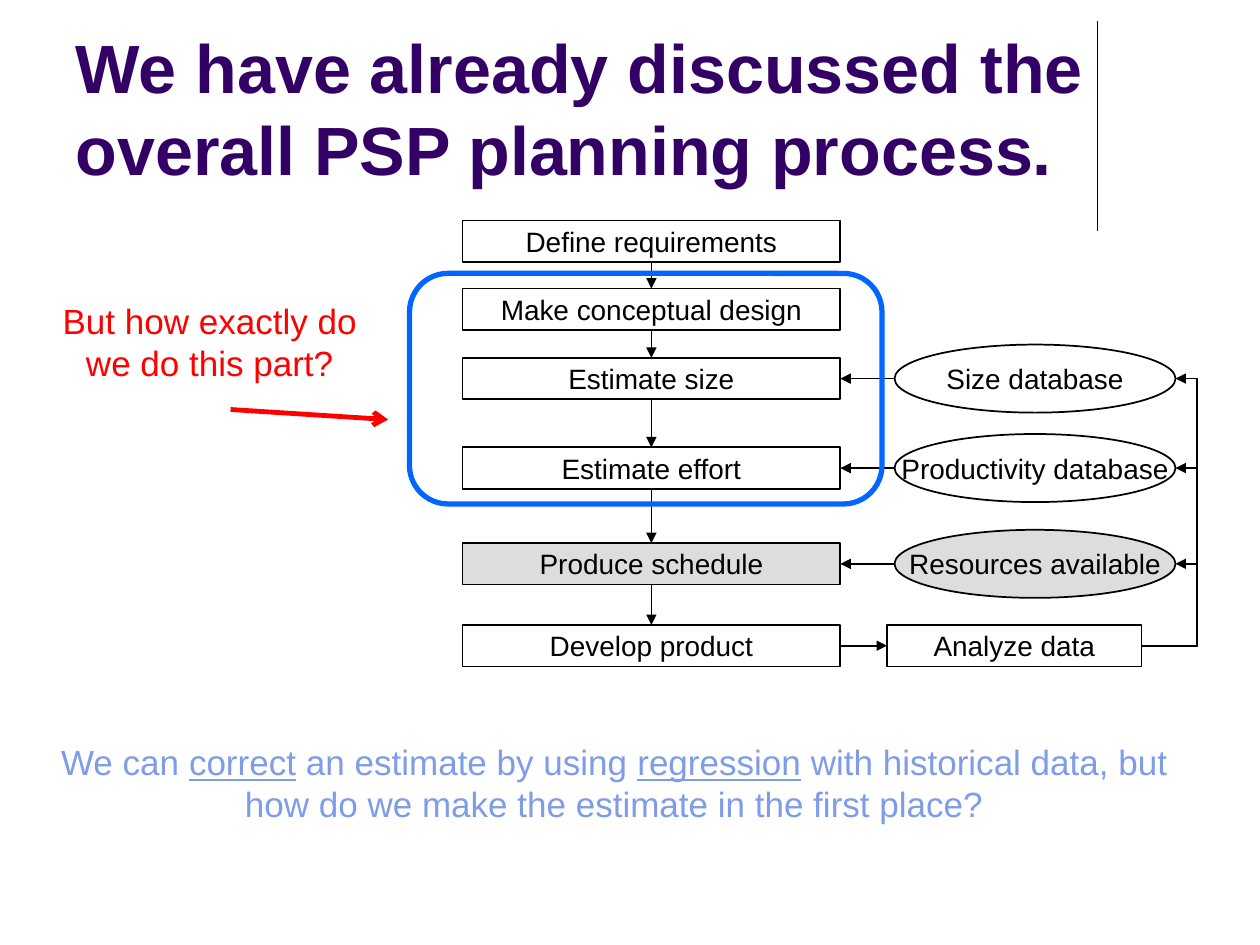
from dataclasses import dataclass
from itertools import pairwise

from lxml import etree
from pptx import Presentation
from pptx.dml.color import RGBColor
from pptx.enum.shapes import MSO_CONNECTOR as CONN, MSO_SHAPE as SHAPE
from pptx.enum.text import MSO_ANCHOR as ANCHOR, MSO_AUTO_SIZE as AUTO, PP_ALIGN as ALIGN
from pptx.oxml.ns import qn
from pptx.shapes.autoshape import Shape
from pptx.shapes.connector import Connector
from pptx.slide import Slide
from pptx.text.text import Font
from pptx.util import Inches, Pt

BLACK, RED, BLUE = "000000", "FF0000", "0066FF"
GREY, PURPLE, LILAC = "DDDDDD", "330066", "7E9CE8"
TOP, LEFT, BOTTOM, RIGHT = range(4)
BOX_X, BOX_W, BOX_H = 3.67, 3, 0.33
DATA_X, DATA_W, DATA_H = 7.1, 2.23, 0.54
ANALYZE_X, ANALYZE_W = 7.04, 2.02
FEEDBACK_X = 9.5


@dataclass
class Step:
    name: str
    top: float
    fill: str | None = None
    source: str | None = None

    @property
    def middle(self) -> float:
        return self.top + BOX_H / 2


STEPS = [
    Step("Define requirements", 1.75),
    Step("Make conceptual design", 2.29),
    Step("Estimate size", 2.84, source="Size database"),
    Step("Estimate effort", 3.55, source="Productivity database"),
    Step("Produce schedule", 4.31, GREY, "Resources available"),
    Step("Develop product", 4.96),
]


def rgb(color: str) -> RGBColor:
    return RGBColor.from_string(color)


def style_font(font: Font, size: float, color: str, bold: bool = False) -> None:
    font.name, font.size, font.bold = "Arial", Pt(size), bold
    font.color.rgb = rgb(color)


def add_outline(s: Slide, kind: SHAPE, x: float, y: float, w: float, h: float,
                color: str = BLACK, width: float = 1, fill: str | None = None) -> Shape:
    sp = s.shapes.add_shape(kind, Inches(x), Inches(y), Inches(w), Inches(h))
    sp.shadow.inherit = False
    sp.line.color.rgb = rgb(color)
    sp.line.width = Pt(width)
    if fill:
        sp.fill.solid()
        sp.fill.fore_color.rgb = rgb(fill)
    else:
        sp.fill.background()
    return sp


def add_node(s: Slide, kind: SHAPE, text: str, x: float, y: float, w: float, h: float,
             fill: str | None = None) -> Shape:
    sp = add_outline(s, kind, x, y, w, h, fill=fill)
    tf = sp.text_frame
    tf.text = text
    tf.word_wrap = False
    tf.vertical_anchor = ANCHOR.MIDDLE
    p = tf.paragraphs[0]
    p.alignment = ALIGN.CENTER
    style_font(p.runs[0].font, 16, BLACK)
    return sp


def add_line(s: Slide, start: tuple[float, float], end: tuple[float, float],
             color: str = BLACK, width: float = 1, head: str | None = "triangle",
             kind: CONN = CONN.STRAIGHT) -> Connector:
    cx = s.shapes.add_connector(kind, *map(Inches, start + end))
    cx.line.color.rgb = rgb(color)
    cx.line.width = Pt(width)
    if head:
        etree.SubElement(cx.line._get_or_add_ln(), qn("a:tailEnd"), type=head)
    etree.SubElement(cx._element.spPr, qn("a:effectLst"))
    return cx


def add_feedback(s: Slide, start: tuple[float, float], end: tuple[float, float]) -> Connector:
    cx = add_line(s, start, end, kind=CONN.ELBOW)
    ratio = (FEEDBACK_X - start[0]) / (end[0] - start[0])
    guides = cx._element.spPr.find(qn("a:prstGeom")).get_or_add_avLst()
    etree.SubElement(guides, qn("a:gd"), name="adj1", fmla=f"val {round(ratio * 100000)}")
    return cx


def add_note(s: Slide, parts: list[str], x: float, y: float, w: float, h: float,
             color: str, underlined: tuple[str, ...] = ()) -> None:
    tf = s.shapes.add_textbox(Inches(x), Inches(y), Inches(w), Inches(h)).text_frame
    tf.word_wrap = True
    tf.auto_size = AUTO.SHAPE_TO_FIT_TEXT
    p = tf.paragraphs[0]
    p.alignment = ALIGN.CENTER
    for part in parts:
        r = p.add_run()
        r.text = part
        style_font(r.font, 20, color)
        r.font.underline = part in underlined


def add_title(s: Slide, text: str) -> None:
    sp = s.shapes.title
    sp.left, sp.top, sp.width, sp.height = map(Inches, (0.5, 0.13, 8.25, 1.42))
    tf = sp.text_frame
    tf.text = text
    tf.auto_size = AUTO.NONE
    tf.vertical_anchor = ANCHOR.BOTTOM
    p = tf.paragraphs[0]
    p.alignment = ALIGN.LEFT
    style_font(p.runs[0].font, 39, PURPLE, bold=True)


def add_process(s: Slide) -> None:
    boxes = [add_node(s, SHAPE.RECTANGLE, step.name, BOX_X, step.top, BOX_W, BOX_H, step.fill)
             for step in STEPS]
    last = STEPS[-1]
    analyze = add_node(s, SHAPE.RECTANGLE, "Analyze data", ANALYZE_X, last.top, ANALYZE_W, BOX_H)
    center, right = BOX_X + BOX_W / 2, BOX_X + BOX_W

    for (step, box), (following, next_box) in pairwise(zip(STEPS, boxes)):
        cx = add_line(s, (center, step.top + BOX_H), (center, following.top))
        cx.begin_connect(box, BOTTOM)
        cx.end_connect(next_box, TOP)

    cx = add_line(s, (right, last.middle), (ANALYZE_X, last.middle))
    cx.begin_connect(boxes[-1], RIGHT)
    cx.end_connect(analyze, LEFT)

    for step, box in zip(STEPS, boxes):
        if step.source:
            add_node(s, SHAPE.OVAL, step.source, DATA_X, step.middle - DATA_H / 2,
                     DATA_W, DATA_H, step.fill)
            cx = add_line(s, (DATA_X, step.middle), (right, step.middle))
            cx.end_connect(box, RIGHT)
            add_feedback(s, (ANALYZE_X + ANALYZE_W, last.middle), (DATA_X + DATA_W, step.middle))


def main() -> None:
    prs = Presentation()
    prs.slide_width, prs.slide_height = Inches(10), Inches(7.5)
    s = prs.slides.add_slide(prs.slide_layouts[5])
    add_line(s, (8.71, 0.17), (8.71, 1.83), width=0.75, head=None)
    add_title(s, "We have already discussed the overall PSP planning process.")
    add_process(s)
    add_note(s, ["But how exactly do we do this part?"], 0.33, 2.33, 2.67, 0.77, RED)
    add_outline(s, SHAPE.ROUNDED_RECTANGLE, 3.25, 2.17, 3.75, 1.83, BLUE, 3)
    add_note(s, ["We can ", "correct", " an estimate by using ", "regression",
                 " with historical data, but how do we make the estimate in the first place?"],
             0.25, 5.83, 9.25, 0.77, LILAC, ("correct", "regression"))
    add_line(s, (1.83, 3.25), (3.08, 3.33), RED, 2.75, "arrow")
    prs.save("out.pptx")


if __name__ == "__main__":
    main()
